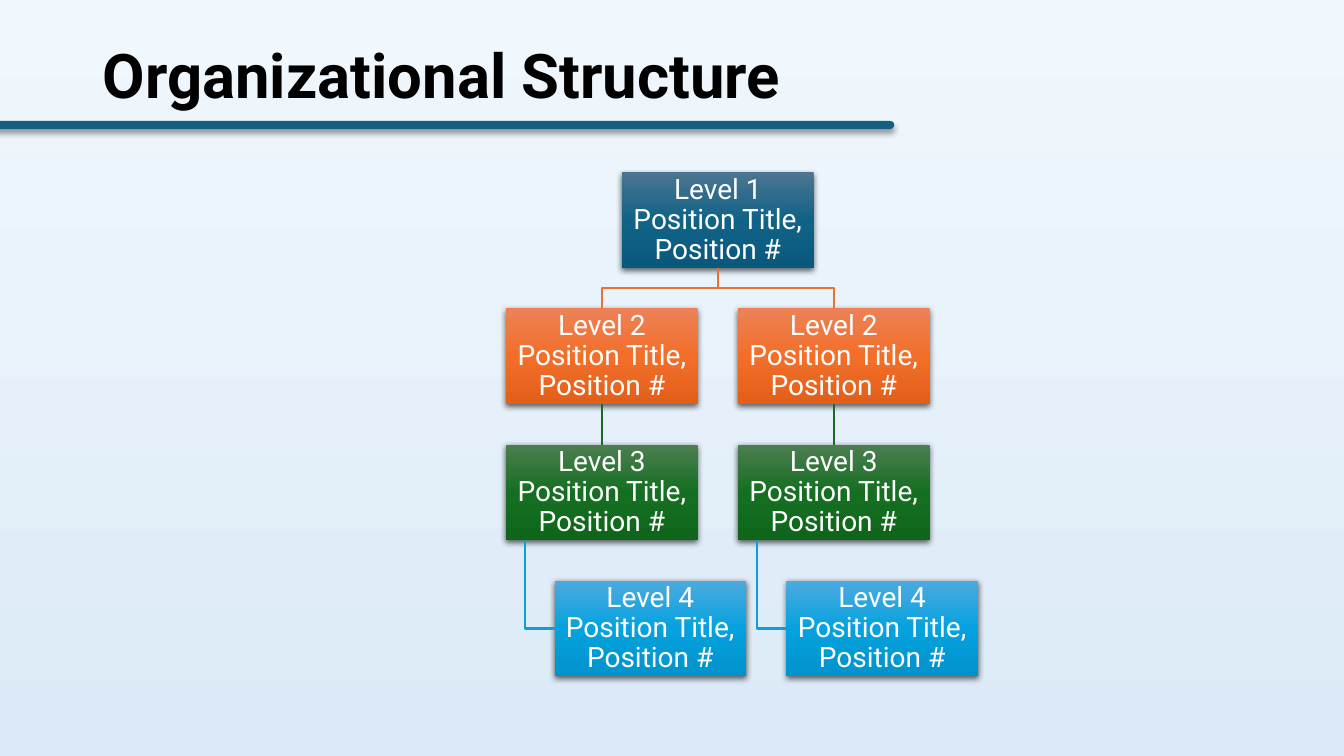
from copy import deepcopy
from dataclasses import dataclass

from lxml import etree
from pptx import Presentation
from pptx.dml.color import RGBColor
from pptx.enum.shapes import MSO_CONNECTOR, MSO_SHAPE
from pptx.enum.text import MSO_ANCHOR, MSO_AUTO_SIZE, PP_ALIGN
from pptx.oxml.ns import qn
from pptx.util import Inches, Pt

RECTANGLE = MSO_SHAPE.RECTANGLE
ROUNDED = MSO_SHAPE.ROUNDED_RECTANGLE
STRAIGHT = MSO_CONNECTOR.STRAIGHT
TOP, MIDDLE = MSO_ANCHOR.TOP, MSO_ANCHOR.MIDDLE
LEFT, CENTER = PP_ALIGN.LEFT, PP_ALIGN.CENTER
NO_AUTOFIT = MSO_AUTO_SIZE.NONE
BOTTOM_SITE, TOP_SITE = 2, 0


@dataclass(frozen=True)
class Theme:
    font: str = "Roboto"
    title_size: int = 44
    box_size: int = 20
    line_spacing: float = 0.9
    line_width: float = 1.5
    title_color: str = "000000"
    box_text: str = "FFFFFF"
    accent: str = "156082"
    shadow: str = "000000"
    background: tuple = ("F0F8FD", "DCEAF7")
    level_fills: tuple = (
        ("4C7591", "106287", "09597D"),
        ("ED8257", "F26E29", "E25F1A"),
        ("4D7E50", "156F21", "0F661B"),
        ("4CAADF", "05A2DF", "0092CB"),
    )
    level_lines: tuple = ("156082", "E97132", "196B24", "0F9ED5")


class OrgSlide:
    def __init__(self, slide, theme):
        self.slide = slide
        self.theme = theme
        self.gradient(slide.background.fill, theme.background)

    def gradient(self, fill, colors):
        fill.gradient()
        fill.gradient_angle = 270
        first_stop = fill.gradient_stops[0]._gs
        for _ in colors[2:]:
            first_stop.addnext(deepcopy(first_stop))
        for index, (stop, color) in enumerate(zip(fill.gradient_stops, colors)):
            stop.color.rgb = RGBColor.from_string(color)
            stop.position = index / (len(colors) - 1)

    def shadow(self, shape, opacity, blur, distance):
        shape.shadow.inherit = False
        effects = shape._element.spPr.find(qn("a:effectLst"))
        outer = etree.SubElement(
            effects, qn("a:outerShdw"), blurRad=str(Pt(blur)),
            dist=str(Pt(distance)), dir="5400000", algn="ctr", rotWithShape="0")
        color = etree.SubElement(outer, qn("a:srgbClr"), val=self.theme.shadow)
        etree.SubElement(color, qn("a:alpha"), val=str(opacity * 1000))

    def set_text(self, frame, text, size, color, align, anchor, bold=False):
        frame.text = text
        frame.word_wrap = True
        frame.auto_size = NO_AUTOFIT
        frame.vertical_anchor = anchor
        paragraph = frame.paragraphs[0]
        paragraph.alignment = align
        paragraph.line_spacing = self.theme.line_spacing
        paragraph.font.name = self.theme.font
        paragraph.font.size = Pt(size)
        paragraph.font.bold = bold
        paragraph.font.color.rgb = RGBColor.from_string(color)

    def title(self, text, left, top, width, height):
        heading = self.slide.shapes.title
        heading.left, heading.top = Inches(left), Inches(top)
        heading.width, heading.height = Inches(width), Inches(height)
        self.set_text(heading.text_frame, text, self.theme.title_size,
                      self.theme.title_color, LEFT, TOP, bold=True)

    def underline(self, left, top, width, height):
        bar = self.slide.shapes.add_shape(
            ROUNDED, Inches(left), Inches(top), Inches(width), Inches(height))
        bar.adjustments[0] = 0.5
        bar.fill.solid()
        bar.fill.fore_color.rgb = RGBColor.from_string(self.theme.accent)
        bar.line.fill.background()
        self.shadow(bar, 40, 4, 3)

    def position(self, level, left, top, width, height):
        box = self.slide.shapes.add_shape(
            RECTANGLE, Inches(left), Inches(top), Inches(width), Inches(height))
        self.gradient(box.fill, self.theme.level_fills[level - 1])
        box.line.fill.background()
        self.shadow(box, 63, 4.5, 1.5)
        frame = box.text_frame
        frame.margin_left = frame.margin_right = Inches(0.01)
        frame.margin_top = frame.margin_bottom = Inches(0.01)
        self.set_text(frame, f"Level {level} Position Title, Position #",
                      self.theme.box_size, self.theme.box_text, CENTER, MIDDLE)
        return box

    def stroke(self, line, level):
        line.color.rgb = RGBColor.from_string(self.theme.level_lines[level - 1])
        line.width = Pt(self.theme.line_width)

    def straight_link(self, parent, child, level):
        link = self.slide.shapes.add_connector(STRAIGHT, 0, 0, 0, 0)
        link.begin_connect(parent, BOTTOM_SITE)
        link.end_connect(child, TOP_SITE)
        self.stroke(link.line, level)
        etree.SubElement(link._element.spPr, qn("a:effectLst"))

    def bent_link(self, points, level):
        start, *rest = points
        builder = self.slide.shapes.build_freeform(*start)
        builder.add_line_segments(rest, close=False)
        link = builder.convert_to_shape()
        link.fill.background()
        link.shadow.inherit = False
        self.stroke(link.line, level)

    def branch_link(self, parent, child, level):
        parent_x = parent.left + parent.width // 2
        parent_y = parent.top + parent.height
        child_x = child.left + child.width // 2
        middle_y = (parent_y + child.top) // 2
        self.bent_link([(parent_x, parent_y), (parent_x, middle_y),
                        (child_x, middle_y), (child_x, child.top)], level)

    def hanging_link(self, parent, child, level):
        stem_x = parent.left + parent.width // 10
        child_y = child.top + child.height // 2
        self.bent_link([(stem_x, parent.top + parent.height),
                        (stem_x, child_y), (child.left, child_y)], level)


def main():
    presentation = Presentation()
    presentation.slide_width = Inches(13.33)
    presentation.slide_height = Inches(7.5)
    chart = OrgSlide(
        presentation.slides.add_slide(presentation.slide_layouts[5]), Theme())

    chart.title("Organizational Structure", 0.92, 0.4, 11.5, 1.45)
    chart.underline(-0.14, 1.2, 9.01, 0.08)

    width, height = 1.9, 0.95
    first_top, row_step = 1.71, 1.35
    branch_left, branch_step, indent = 5.02, 2.3, 0.48
    tops = [first_top + row_step * row for row in range(4)]

    head = chart.position(1, branch_left + branch_step / 2, tops[0], width, height)
    for branch in range(2):
        left = branch_left + branch_step * branch
        second = chart.position(2, left, tops[1], width, height)
        third = chart.position(3, left, tops[2], width, height)
        fourth = chart.position(4, left + indent, tops[3], width, height)
        chart.branch_link(head, second, 2)
        chart.straight_link(second, third, 3)
        chart.hanging_link(third, fourth, 4)

    presentation.save("out.pptx")


if __name__ == "__main__":
    main()
